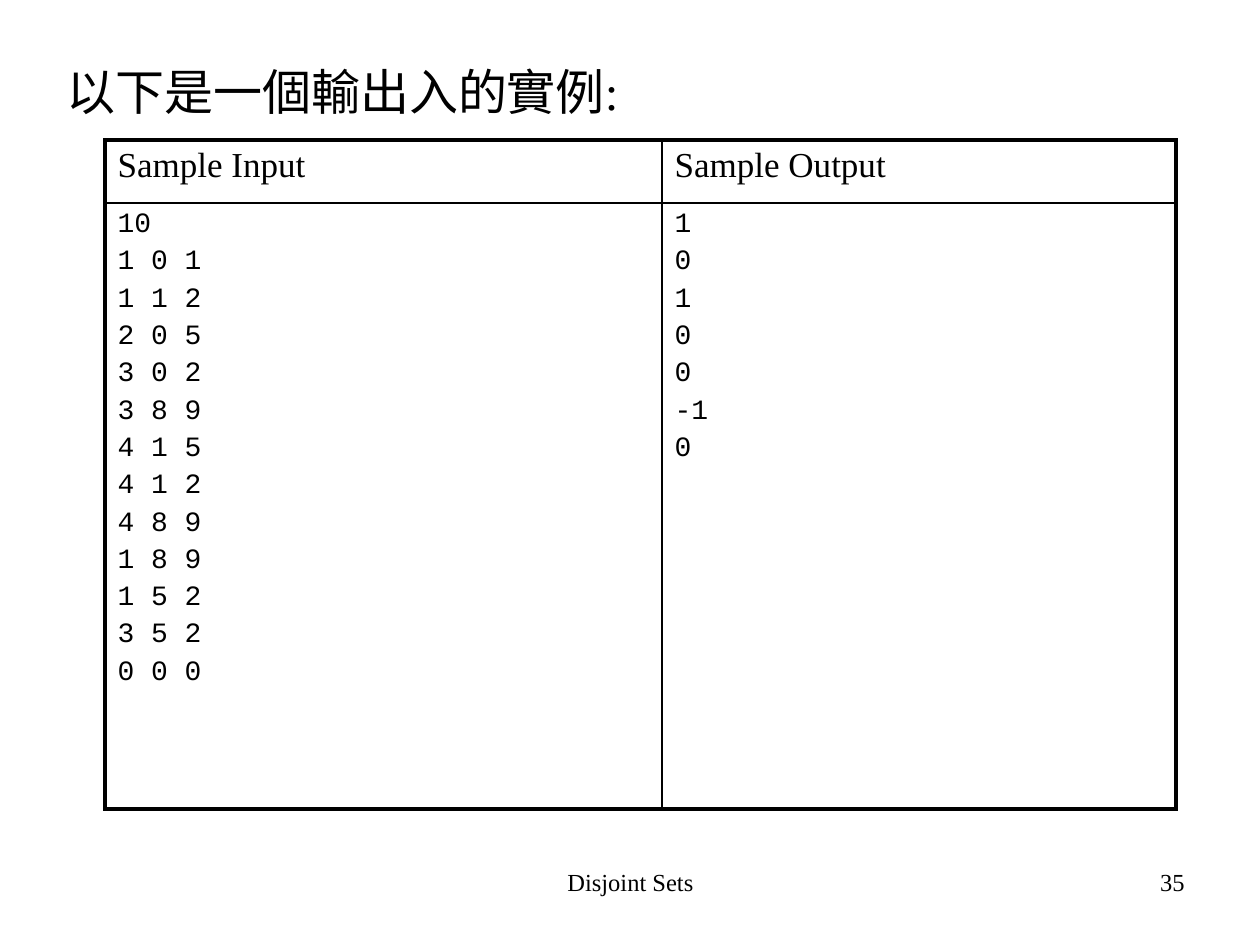
from lxml.etree import SubElement
from pptx import Presentation
from pptx.dml.color import RGBColor
from pptx.enum.text import MSO_ANCHOR, MSO_AUTO_SIZE, PP_ALIGN
from pptx.oxml import parse_xml
from pptx.oxml.ns import nsdecls, qn
from pptx.util import Pt

EMU_PER_PX = 914400 / 126
BLACK = "000000"
SERIF = "Times New Roman"
MONO = "Courier New"
COLUMNS = [557, 514]
ROWS = [63, 606]
OUTER, INNER = 2.25, 1
HEADERS = ["Sample Input", "Sample Output"]
SAMPLE_INPUT = [
    "10", "1 0 1", "1 1 2", "2 0 5", "3 0 2", "3 8 9", "4 1 5",
    "4 1 2", "4 8 9", "1 8 9", "1 5 2", "3 5 2", "0 0 0",
]
SAMPLE_OUTPUT = ["1", "0", "1", "0", "0", "-1", "0"]


def px(length):
    return round(length * EMU_PER_PX)


def color(value):
    return RGBColor.from_string(value)


def write(frame, text, size, font, align=PP_ALIGN.LEFT, gap=0.2):
    frame.text = text
    frame.word_wrap = True
    for para in frame.paragraphs:
        para.alignment = align
        para.space_before = Pt(round(size * gap, 2))
        for span in para.runs:
            span.font.size = Pt(size)
            span.font.name = font
            span.font.color.rgb = color(BLACK)


def add_heading(page, text):
    body = page.placeholders[1]
    body.left, body.top, body.width, body.height = map(px, (54, 55, 1134, 624))
    frame = body.text_frame
    write(frame, text, 28, SERIF)
    frame.auto_size = MSO_AUTO_SIZE.NONE
    frame.vertical_anchor = MSO_ANCHOR.TOP
    properties = frame.paragraphs[0]._p.get_or_add_pPr()
    properties.set("marL", str(px(48)))
    properties.set("indent", str(px(-48)))
    SubElement(properties, qn("a:buNone"))


def add_footer(page, text, left, width, align):
    box = page.shapes.add_textbox(px(left), px(861), px(width), px(66))
    write(box.text_frame, text, 14, SERIF, align, gap=0)


def set_borders(cell, widths):
    properties = cell._tc.get_or_add_tcPr()
    for position, (side, width) in enumerate(widths.items()):
        line = parse_xml(
            f'<a:ln{side} {nsdecls("a")} w="{Pt(width)}"><a:solidFill>'
            f'<a:srgbClr val="{BLACK}"/></a:solidFill></a:ln{side}>'
        )
        properties.insert(position, line)


def add_sample_table(page):
    frame = page.shapes.add_table(
        len(ROWS), len(COLUMNS), px(105), px(140), px(sum(COLUMNS)), px(sum(ROWS))
    )
    table = frame.table
    table.first_row = table.horz_banding = False
    for column, width in zip(table.columns, COLUMNS):
        column.width = px(width)
    for row, height in zip(table.rows, ROWS):
        row.height = px(height)

    samples = ["\n".join(lines) for lines in (SAMPLE_INPUT, SAMPLE_OUTPUT)]
    styles = [(HEADERS, 20, SERIF), (samples, 16, MONO)]
    for r, (texts, size, font) in enumerate(styles):
        for c, text in enumerate(texts):
            cell = table.cell(r, c)
            write(cell.text_frame, text, size, font)
            cell.fill.background()
            set_borders(cell, {
                "L": OUTER if c == 0 else INNER,
                "R": OUTER if c == len(COLUMNS) - 1 else INNER,
                "T": OUTER if r == 0 else INNER,
                "B": OUTER if r == len(ROWS) - 1 else INNER,
            })


def main():
    deck = Presentation()
    deck.slide_width, deck.slide_height = px(1260), px(945)
    page = deck.slides.add_slide(deck.slide_layouts[1])
    title = page.shapes.title._element
    title.getparent().remove(title)
    add_footer(page, "Disjoint Sets", 431, 399, PP_ALIGN.CENTER)
    add_footer(page, "35", 903, 294, PP_ALIGN.RIGHT)
    add_heading(page, "以下是一個輸出入的實例:")
    add_sample_table(page)
    deck.save("out.pptx")


if __name__ == "__main__":
    main()
